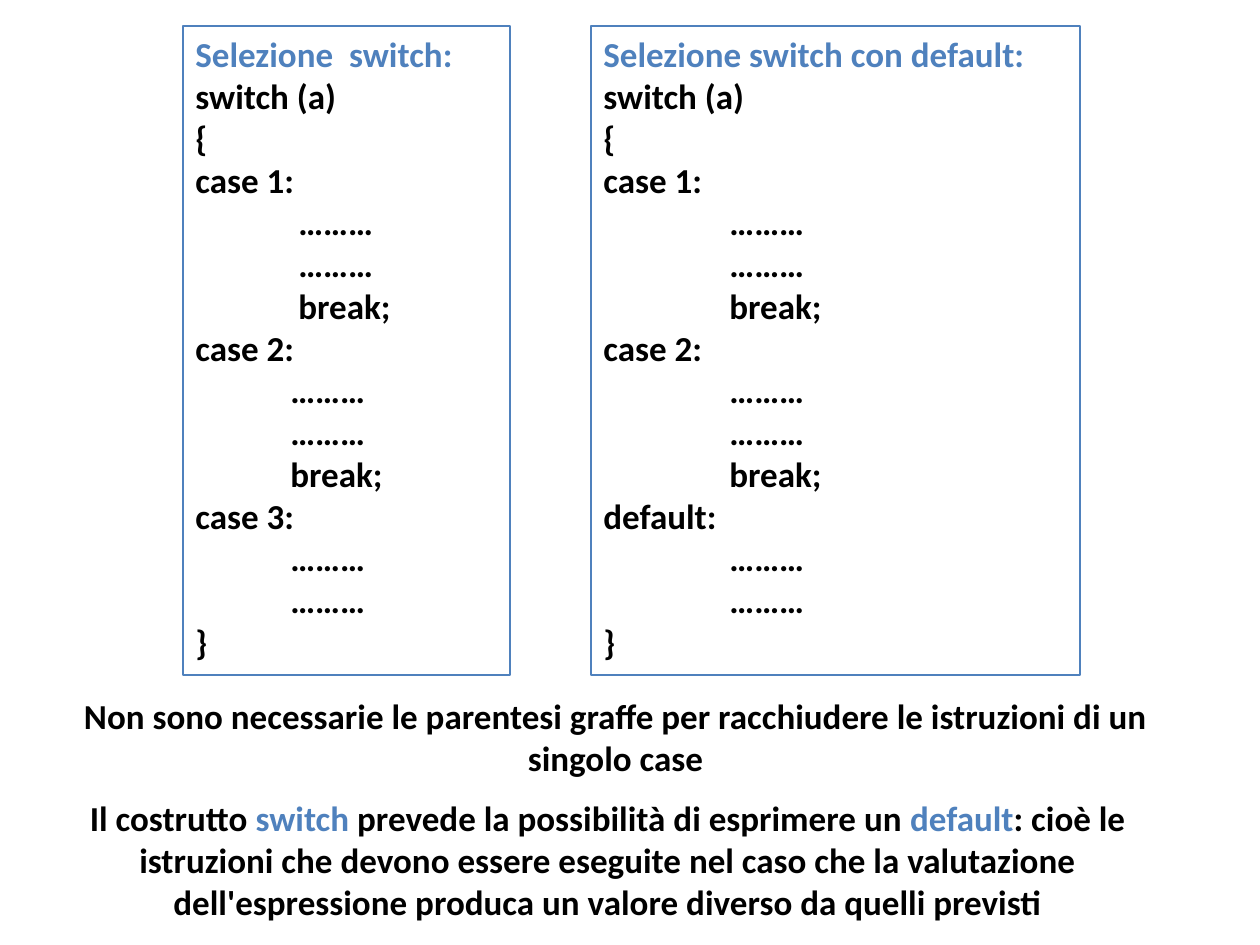
"""Build the slide on the switch statement with and without default."""
from dataclasses import dataclass

from pptx import Presentation
from pptx.dml.color import RGBColor
from pptx.enum.shapes import MSO_SHAPE
from pptx.enum.text import MSO_ANCHOR, MSO_AUTO_SIZE, PP_ALIGN
from pptx.util import Emu, Pt

EMU_PER_PX = 914400 / 126


@dataclass(frozen=True)
class Theme:
    font: str = "Calibri"
    size: Pt = Pt(20)
    line: Pt = Pt(0.75)
    text: RGBColor = RGBColor(0x00, 0x00, 0x00)
    accent: RGBColor = RGBColor(0x4F, 0x81, 0xBD)


@dataclass(frozen=True)
class Box:
    left: int
    top: int
    width: int
    height: int


@dataclass(frozen=True)
class Run:
    text: str
    accent: bool = False


@dataclass(frozen=True)
class Branch:
    label: str
    indent: int
    ends_with_break: bool = True


@dataclass(frozen=True)
class CodePanel:
    box: Box
    title: str
    branches: tuple[Branch, ...]


@dataclass(frozen=True)
class Note:
    box: Box
    runs: tuple[Run, ...]


THEME = Theme()

PANELS = (
    CodePanel(
        Box(183, 26, 327, 649),
        "Selezione  switch:",
        (Branch("case 1:", 103), Branch("case 2:", 95), Branch("case 3:", 95, False)),
    ),
    CodePanel(
        Box(591, 26, 489, 649),
        "Selezione switch con default:",
        (Branch("case 1:", 126), Branch("case 2:", 126), Branch("default:", 126, False)),
    ),
)

NOTES = (
    Note(
        Box(19, 688, 1193, 97),
        (Run("Non sono necessarie le parentesi graffe per racchiudere "
             "le istruzioni di un singolo case"),),
    ),
    Note(
        Box(19, 790, 1177, 140),
        (
            Run("Il costrutto "),
            Run("switch", True),
            Run(" prevede la possibilità di esprimere un "),
            Run("default", True),
            Run(": cioè le istruzioni che devono essere eseguite nel caso che "
                "la valutazione dell'espressione produca un valore diverso "
                "da quelli previsti"),
        ),
    ),
)


def px(n: int) -> Emu:
    return Emu(round(n * EMU_PER_PX))


def place(box: Box) -> tuple[Emu, ...]:
    return px(box.left), px(box.top), px(box.width), px(box.height)


def prepare(tf) -> None:
    tf.word_wrap = True
    tf.auto_size = MSO_AUTO_SIZE.SHAPE_TO_FIT_TEXT
    tf.vertical_anchor = MSO_ANCHOR.TOP


def style(p, align: PP_ALIGN, color: RGBColor) -> None:
    p.alignment = align
    p.font.name = THEME.font
    p.font.size = THEME.size
    p.font.bold = True
    p.font.color.rgb = color


def code_lines(panel: CodePanel) -> list[tuple[str, int]]:
    lines = [(panel.title, 0), ("switch (a)", 0), ("{", 0)]
    for branch in panel.branches:
        body = ["………", "………"] + ["break;"] * branch.ends_with_break
        lines += [(branch.label, 0)] + [(text, branch.indent) for text in body]
    return lines + [("}", 0)]


def draw_panel(slide, panel: CodePanel) -> None:
    sp = slide.shapes.add_shape(MSO_SHAPE.RECTANGLE, *place(panel.box))
    sp.shadow.inherit = False
    sp.fill.background()
    sp.line.color.rgb = THEME.accent
    sp.line.width = THEME.line
    tf = sp.text_frame
    prepare(tf)
    for i, (text, indent) in enumerate(code_lines(panel)):
        p = tf.add_paragraph() if i else tf.paragraphs[0]
        style(p, PP_ALIGN.LEFT, THEME.text if i else THEME.accent)
        p.add_run().text = text
        if indent:
            pPr = p._p.get_or_add_pPr()
            pPr.set("marL", str(px(indent)))
            pPr.set("indent", "0")


def draw_note(slide, note: Note) -> None:
    tf = slide.shapes.add_textbox(*place(note.box)).text_frame
    prepare(tf)
    p = tf.paragraphs[0]
    style(p, PP_ALIGN.CENTER, THEME.text)
    for run in note.runs:
        r = p.add_run()
        r.text = run.text
        if run.accent:
            r.font.color.rgb = THEME.accent


def main() -> None:
    prs = Presentation()
    prs.slide_width, prs.slide_height = px(1260), px(945)
    slide = prs.slides.add_slide(prs.slide_layouts[6])
    for panel in PANELS:
        draw_panel(slide, panel)
    for note in NOTES:
        draw_note(slide, note)
    prs.save("out.pptx")


if __name__ == "__main__":
    main()
